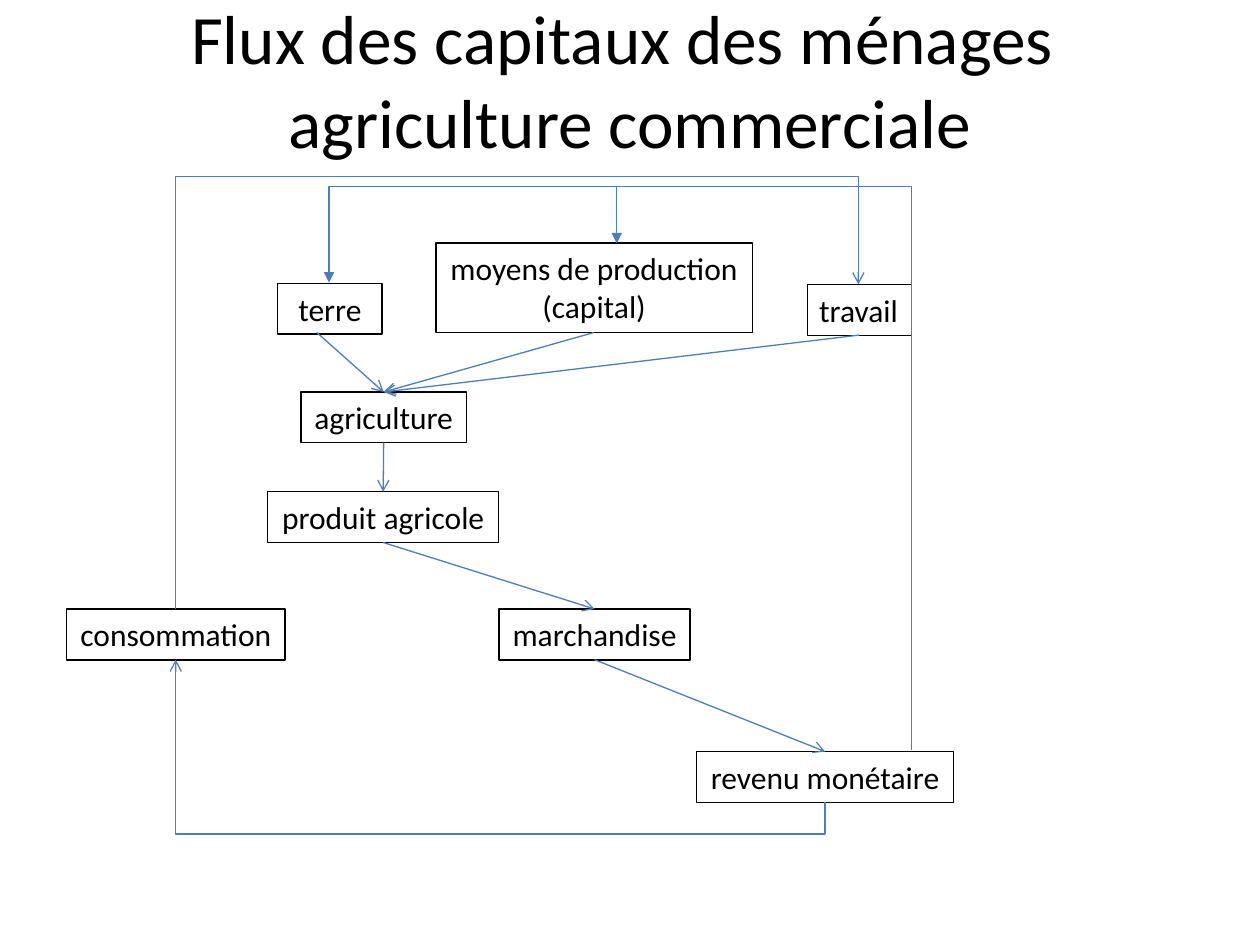
from dataclasses import dataclass

import pptx
import pptx.dml.color
import pptx.enum.shapes
import pptx.enum.text
import pptx.oxml.ns
import pptx.util
from lxml import etree

Pt = pptx.util.Pt
RGB = pptx.dml.color.RGBColor
CONNECTOR = pptx.enum.shapes.MSO_CONNECTOR
ALIGN = pptx.enum.text.PP_ALIGN
AUTO_SIZE = pptx.enum.text.MSO_AUTO_SIZE
qn = pptx.oxml.ns.qn
TOP, BOTTOM = 0, 2


@dataclass(frozen=True)
class Theme:
    font: str = "Calibri"
    title_size: float = 39.6
    box_size: float = 18
    text: RGB = RGB(0, 0, 0)
    paper: RGB = RGB(255, 255, 255)
    flow: RGB = RGB(0x4B, 0x7E, 0xBC)
    flow_width: float = 0.75


THEME = Theme()

# name: (lines, left, top, width, height, border width, filled)
BOXES = {
    "terre": (["terre"], 158.5, 162, 60, 29, 1, True),
    "travail": (["travail"], 461, 162.5, 60, 29, 0.25, False),
    "capital": (["moyens de production", "(capital)"], 249, 139, 181, 51, 1, True),
    "agriculture": (["agriculture"], 172, 224, 94.5, 29, 0.75, False),
    "produit": (["produit agricole"], 153, 281, 132, 29, 0.75, False),
    "consommation": (["consommation"], 38, 348, 125, 29, 1, True),
    "marchandise": (["marchandise"], 285, 348, 109.5, 29, 1, True),
    "revenu": (["revenu monétaire"], 398, 429.5, 147, 29, 0.75, False),
}

# Straight flows, from the bottom of one box to the top of the next
FLOWS = [
    ("produit", "marchandise"),
    ("marchandise", "revenu"),
    ("capital", "agriculture"),
    ("agriculture", "produit"),
    ("travail", "agriculture"),
]

# Return flows: start, height of the horizontal run, end, arrowhead
RETURNS = [
    ((471.5, 458.5), 476.5, (100.5, 377), "arrow"),
    ((100.5, 348), 101, (490.5, 162.5), "arrow"),
    ((521, 428.5), 106.5, (352.5, 139), "triangle"),
    ((352.5, 106.5), 106.5, (188, 161.5), "triangle"),
]


def add_lines(p, lines, size):
    for i, line in enumerate(lines):
        if i:
            p.add_line_break()
        r = p.add_run()
        r.text = line
        r.font.name = THEME.font
        r.font.size = Pt(size)
        r.font.color.rgb = THEME.text


def set_title(s, lines):
    title = s.shapes.title
    title.left, title.top, title.width, title.height = Pt(36), Pt(0), Pt(648), Pt(90)
    tf = title.text_frame
    tf.auto_size = AUTO_SIZE.NONE
    tf.vertical_anchor = pptx.enum.text.MSO_ANCHOR.MIDDLE
    p = tf.paragraphs[0]
    p.alignment = ALIGN.CENTER
    add_lines(p, lines, THEME.title_size)


def add_box(s, lines, left, top, width, height, border, filled):
    sp = s.shapes.add_textbox(Pt(left), Pt(top), Pt(width), Pt(height))
    if filled:
        sp.fill.solid()
        sp.fill.fore_color.rgb = THEME.paper
    sp.line.color.rgb = THEME.text
    sp.line.width = Pt(border)
    tf = sp.text_frame
    tf.word_wrap = False
    tf.auto_size = AUTO_SIZE.SHAPE_TO_FIT_TEXT
    p = tf.paragraphs[0]
    p.alignment = ALIGN.CENTER
    add_lines(p, lines, THEME.box_size)
    return sp


def style_flow(cx, head):
    cx.line.color.rgb = THEME.flow
    cx.line.width = Pt(THEME.flow_width)
    etree.SubElement(cx.line._get_or_add_ln(), qn("a:tailEnd"), type=head)
    etree.SubElement(cx._element.spPr, qn("a:effectLst"))


def add_flow(s, start=(0, 0), end=(0, 0), source=None, target=None):
    cx = s.shapes.add_connector(CONNECTOR.STRAIGHT, *map(Pt, start + end))
    if source is not None:
        cx.begin_connect(source, BOTTOM)
    if target is not None:
        cx.end_connect(target, TOP)
    style_flow(cx, "arrow")


def add_return(s, start, run_y, end, head):
    """Elbow that leaves vertically, runs across at run_y, then arrives vertically."""
    (x1, y1), (x2, y2) = start, end
    width, height = abs(y2 - y1), abs(x2 - x1)
    left, top = (x1 + x2 - width) / 2, (y1 + y2 - height) / 2
    cx = s.shapes.add_connector(
        CONNECTOR.ELBOW, Pt(left), Pt(top), Pt(left + width), Pt(top + height))
    # A quarter turn makes the first and last segments vertical
    xfrm = cx._element.spPr.find(qn("a:xfrm"))
    xfrm.set("rot", str(90 * 60000))
    xfrm.set("flipH", str(int(y2 < y1)))
    xfrm.set("flipV", str(int(x2 > x1)))
    bend = round((run_y - y1) / (y2 - y1) * 100000)
    guides = cx._element.spPr.find(qn("a:prstGeom")).find(qn("a:avLst"))
    etree.SubElement(guides, qn("a:gd"), name="adj1", fmla=f"val {bend}")
    style_flow(cx, head)


def main():
    prs = pptx.Presentation()
    prs.slide_width, prs.slide_height = Pt(720), Pt(540)
    s = prs.slides.add_slide(prs.slide_layouts[5])

    set_title(s, ["Flux des capitaux des ménages ", "agriculture commerciale"])

    # Boxes
    boxes = {name: add_box(s, *box) for name, box in BOXES.items()}
    boxes["travail"].text_frame.paragraphs[0].alignment = ALIGN.LEFT

    # Straight flows; the one from the land box starts left of its middle
    for source, target in FLOWS:
        add_flow(s, source=boxes[source], target=boxes[target])
    add_flow(s, start=(181, 190), target=boxes["agriculture"])

    # Return flows
    for route in RETURNS:
        add_return(s, *route)

    prs.save("out.pptx")


if __name__ == "__main__":
    main()
